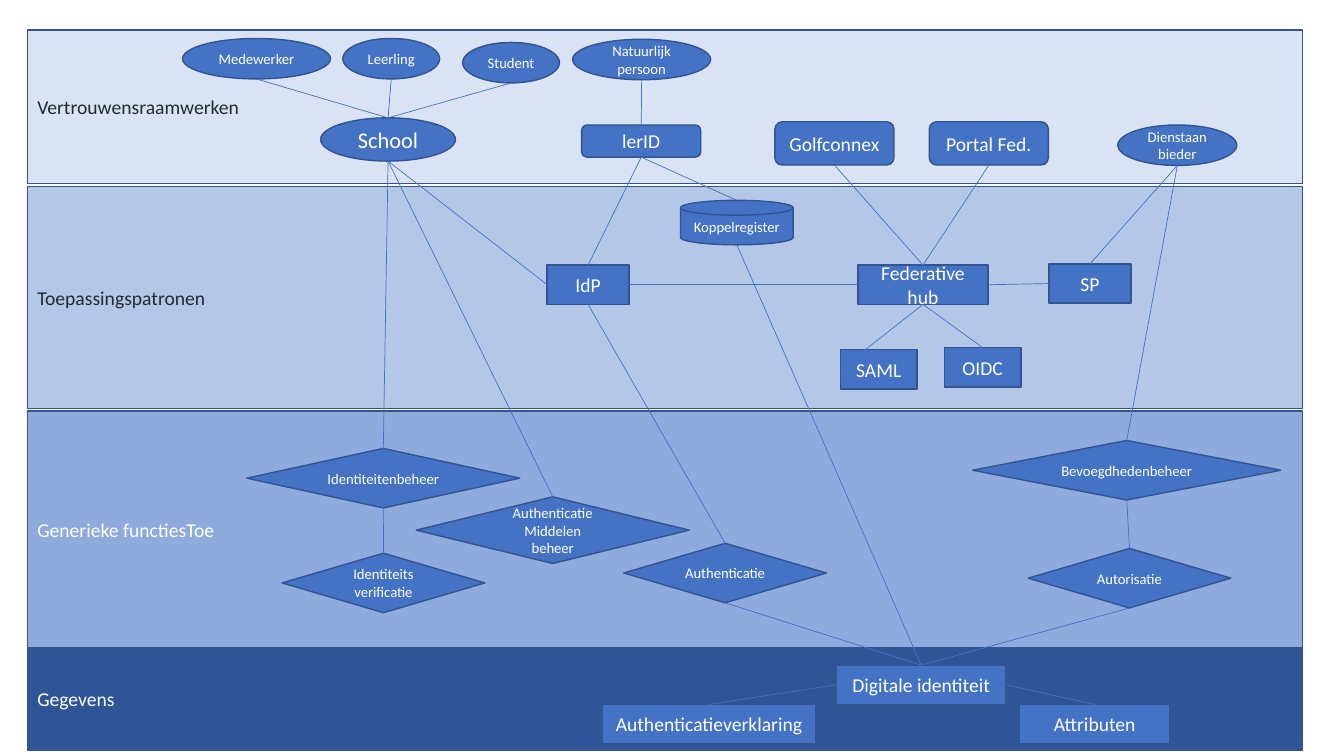
from lxml import etree
from pptx import Presentation
from pptx.dml.color import RGBColor
from pptx.enum.shapes import MSO_CONNECTOR, MSO_SHAPE
from pptx.enum.text import PP_ALIGN
from pptx.oxml.ns import qn
from pptx.util import Cm, Pt

RECT = MSO_SHAPE.RECTANGLE
ROUNDED = MSO_SHAPE.ROUNDED_RECTANGLE
OVAL = MSO_SHAPE.OVAL
DIAMOND = MSO_SHAPE.FLOWCHART_DECISION
DISK = MSO_SHAPE.FLOWCHART_MAGNETIC_DISK
STRAIGHT = MSO_CONNECTOR.STRAIGHT
LEFT_ALIGN = PP_ALIGN.LEFT
CENTER = PP_ALIGN.CENTER
TOP, LEFT, BOTTOM, RIGHT = range(4)

WHITE = RGBColor(0xFF, 0xFF, 0xFF)
INK = RGBColor(0x22, 0x2A, 0x35)
BLUE = RGBColor(0x44, 0x72, 0xC4)
OUTLINE = RGBColor(0x32, 0x54, 0x91)
NAVY = RGBColor(0x2F, 0x55, 0x97)
MID_BLUE = RGBColor(0x8F, 0xAA, 0xDC)
LIGHT_BLUE = RGBColor(0xB4, 0xC7, 0xE7)
PALE_BLUE = RGBColor(0xDA, 0xE3, 0xF3)

deck = Presentation()
deck.slide_width = Cm(33.87)
deck.slide_height = Cm(19.05)
slide = deck.slides.add_slide(deck.slide_layouts[6])


def add_node(kind, label, left, top, width, height, size,
             fill=BLUE, ink=WHITE, align=CENTER):
    node = slide.shapes.add_shape(kind, Cm(left), Cm(top), Cm(width), Cm(height))
    node.shadow.inherit = False
    node.fill.solid()
    node.fill.fore_color.rgb = fill
    node.line.color.rgb = OUTLINE
    node.line.width = Pt(1)
    node.text_frame.text = label
    for paragraph in node.text_frame.paragraphs:
        paragraph.alignment = align
        for run in paragraph.runs:
            run.font.name = "Calibri"
            run.font.size = Pt(size)
            run.font.color.rgb = ink
    return node


layers = [
    ("Gegevens", 16.33, 2.57, NAVY, WHITE),
    ("Generieke functiesToe", 10.36, 5.97, MID_BLUE, WHITE),
    ("Toepassingspatronen", 4.7, 5.59, LIGHT_BLUE, INK),
    ("Vertrouwensraamwerken", 0.76, 3.86, PALE_BLUE, INK),
]
for label, top, height, fill, ink in layers:
    add_node(RECT, label, 0.69, top, 32.13, height, 14, fill, ink, LEFT_ALIGN)

node_specs = [
    ("medewerker", OVAL, "Medewerker", 4.6, 0.97, 3.73, 1.02, 10.5),
    ("leerling", OVAL, "Leerling", 8.64, 0.97, 2.44, 1.02, 10.5),
    ("student", OVAL, "Student", 11.66, 1.07, 2.44, 1.02, 10.5),
    ("persoon", OVAL, "Natuurlijk persoon", 14.43, 0.99, 3.48, 1.02, 10.5),
    ("school", OVAL, "School", 8.08, 2.97, 3.4, 1.09, 16),
    ("leer_id", ROUNDED, "lerID", 14.66, 3.15, 3, 0.81, 14),
    ("federatie", ROUNDED, "Golfconnex", 19.53, 3.07, 3, 1.09, 14),
    ("portaal", ROUNDED, "Portal Fed.", 23.42, 3.07, 3, 1.09, 14),
    ("aanbieder", OVAL, "Dienstaanbieder", 28.17, 3.15, 3, 1.02, 10.5),
    ("register", DISK, "Koppelregister", 17.15, 5.05, 2.84, 1.12, 10.5),
    ("idp", RECT, "IdP", 13.79, 6.68, 2.06, 0.99, 14),
    ("hub", RECT, "Federative hub", 21.62, 6.68, 3.28, 0.99, 14),
    ("sp", RECT, "SP", 26.44, 6.65, 2.06, 0.99, 14),
    ("saml", RECT, "SAML", 21.18, 8.81, 1.93, 0.99, 14),
    ("oidc", RECT, "OIDC", 23.8, 8.76, 1.93, 0.99, 14),
    ("identiteiten", DIAMOND, "Identiteitenbeheer", 6.22, 11.3, 6.88, 1.5, 10.5),
    ("verificatie", DIAMOND, "Identiteits\nverificatie", 7.11, 13.94, 5.11, 1.5, 10.5),
    ("middelen", DIAMOND, "Authenticatie\nMiddelen\nbeheer", 10.49, 12.52, 6.88, 1.68, 10.5),
    ("authenticatie", DIAMOND, "Authenticatie", 15.72, 13.69, 5.11, 1.5, 10.5),
    ("bevoegdheden", DIAMOND, "Bevoegdhedenbeheer", 24.51, 11.1, 7.77, 1.5, 10.5),
    ("autorisatie", DIAMOND, "Autorisatie", 25.91, 13.82, 5.11, 1.5, 10.5),
    ("identiteit", RECT, "Digitale identiteit", 21.08, 16.76, 4.27, 0.99, 14),
    ("verklaring", RECT, "Authenticatieverklaring", 15.19, 17.75, 5.36, 0.99, 14),
    ("attributen", RECT, "Attributen", 25.7, 17.75, 3.78, 0.99, 14),
]
nodes = {key: add_node(*spec) for key, *spec in node_specs}

links = [
    ("medewerker", BOTTOM, "school", TOP),
    ("leerling", BOTTOM, "school", TOP),
    ("student", BOTTOM, "school", TOP),
    ("persoon", BOTTOM, "leer_id", TOP),
    ("school", BOTTOM, "identiteiten", TOP),
    ("school", BOTTOM, "middelen", TOP),
    ("school", BOTTOM, "idp", LEFT),
    ("leer_id", BOTTOM, "idp", TOP),
    ("leer_id", BOTTOM, "register", TOP),
    ("federatie", BOTTOM, "hub", TOP),
    ("portaal", BOTTOM, "hub", TOP),
    ("aanbieder", BOTTOM, "sp", TOP),
    ("aanbieder", BOTTOM, "bevoegdheden", TOP),
    ("idp", RIGHT, "hub", LEFT),
    ("hub", RIGHT, "sp", LEFT),
    ("hub", BOTTOM, "saml", LEFT),
    ("hub", BOTTOM, "oidc", TOP),
    ("idp", BOTTOM, "authenticatie", TOP),
    ("register", BOTTOM, "identiteit", TOP),
    ("identiteiten", BOTTOM, "verificatie", TOP),
    ("bevoegdheden", BOTTOM, "autorisatie", TOP),
    ("authenticatie", BOTTOM, "identiteit", TOP),
    ("autorisatie", BOTTOM, "identiteit", TOP),
    ("identiteit", LEFT, "verklaring", TOP),
    ("identiteit", RIGHT, "attributen", TOP),
]
site_numbers = {OVAL: (0, 2, 4, 6), DISK: (1, 2, 3, 4)}
for source, source_side, target, target_side in links:
    link = slide.shapes.add_connector(STRAIGHT, 0, 0, 0, 0)
    link.begin_connect(nodes[source], source_side)
    link.end_connect(nodes[target], target_side)
    link.line.color.rgb = BLUE
    link.line.width = Pt(0.5)
    etree.SubElement(link.element.spPr, qn("a:effectLst"))
    ends = (("a:stCxn", source, source_side), ("a:endCxn", target, target_side))
    for tag, key, side in ends:
        sites = site_numbers.get(nodes[key].auto_shape_type, range(4))
        next(link.element.iter(qn(tag))).set("idx", str(sites[side]))

deck.save("out.pptx")
